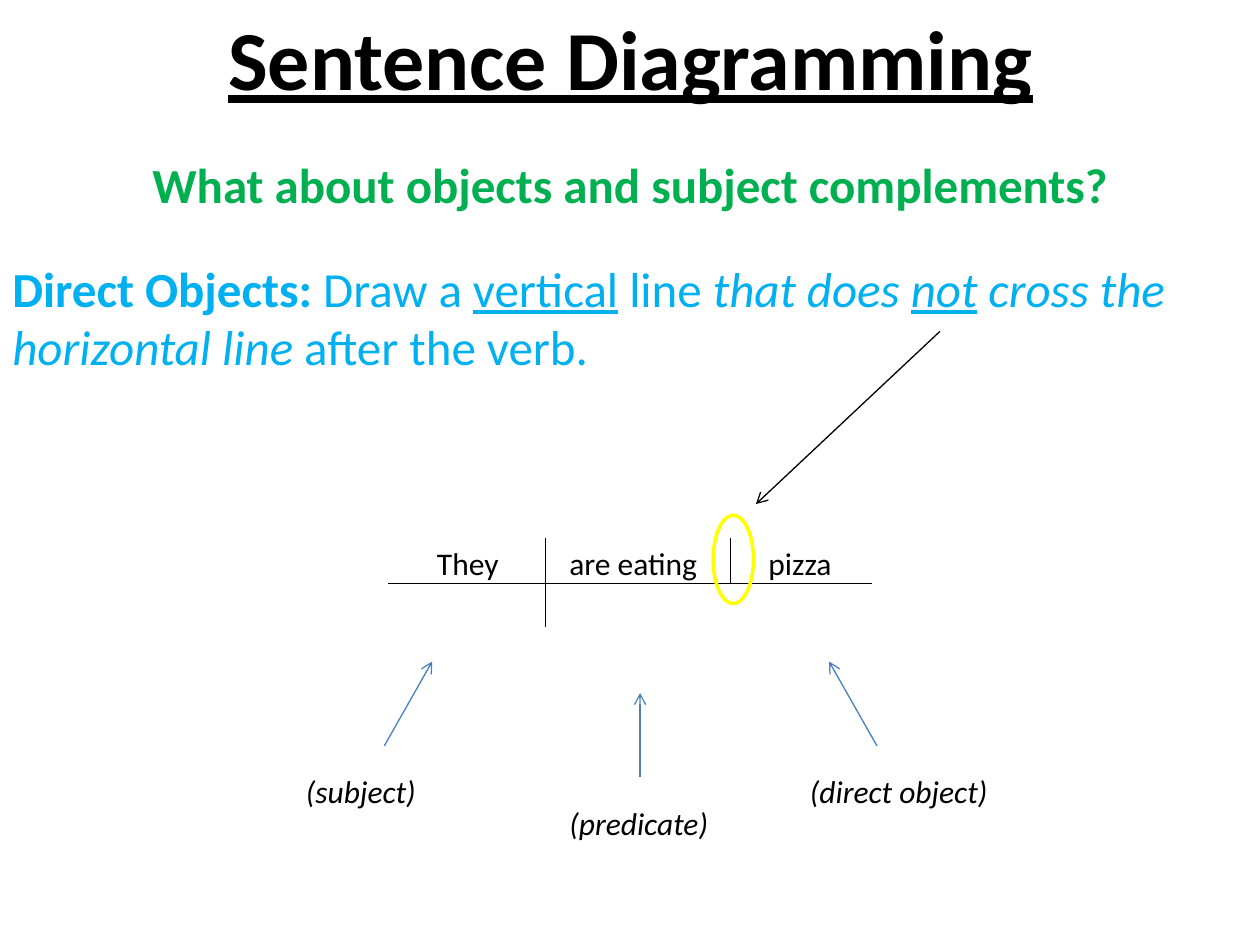
from lxml import etree
from pptx import Presentation
from pptx.dml.color import RGBColor
from pptx.enum.shapes import MSO_CONNECTOR, MSO_SHAPE
from pptx.enum.text import PP_ALIGN
from pptx.oxml.ns import qn
from pptx.util import Inches, Pt

BLACK, GREEN, CYAN, BLUE, YELLOW = "000000", "00B050", "00B0F0", "4B7EBC", "FFFF00"

presentation = Presentation()
presentation.slide_width = Inches(10)
presentation.slide_height = Inches(7.5)
slide = presentation.slides.add_slide(presentation.slide_layouts[6])


def add_text(text, left, top, width, height, size=18, color=BLACK,
             align=PP_ALIGN.LEFT, wrap=False, style=""):
    """Text is a string, or a list of (text, style) runs; style letters: b, i, u."""
    text_box = slide.shapes.add_textbox(
        Inches(left), Inches(top), Inches(width), Inches(height))
    text_box.text_frame.word_wrap = wrap
    paragraph = text_box.text_frame.paragraphs[0]
    paragraph.alignment = align
    runs = [(text, style)] if isinstance(text, str) else text
    for run_text, run_style in runs:
        run = paragraph.add_run()
        run.text = run_text
        font = run.font
        font.name = "Calibri"
        font.size = Pt(size)
        font.color.rgb = RGBColor.from_string(color)
        font.bold = "b" in run_style
        font.italic = "i" in run_style
        font.underline = "u" in run_style


def add_line(x1, y1, x2, y2, color=BLACK, arrow=False):
    connector = slide.shapes.add_connector(
        MSO_CONNECTOR.STRAIGHT, Inches(x1), Inches(y1), Inches(x2), Inches(y2))
    connector.line.color.rgb = RGBColor.from_string(color)
    connector.line.width = Pt(0.75)
    if arrow:
        etree.SubElement(connector.line._get_or_add_ln(), qn("a:tailEnd"), type="arrow")
    etree.SubElement(connector._element.spPr, qn("a:effectLst"))


# Headings and rule
add_text("Sentence Diagramming", 1.68, 0, 6.65, 0.91, size=48,
         align=PP_ALIGN.CENTER, style="bu")
add_text("What about objects and subject complements?", 0, 1.18, 10, 0.57,
         size=28, color=GREEN, align=PP_ALIGN.CENTER, wrap=True, style="b")
add_text([("Direct Objects:", "b"), (" Draw a ", ""), ("vertical", "u"),
          (" line ", ""), ("that does ", "i"), ("not", "iu"),
          (" cross the horizontal line ", "i"), ("after the verb.", "")],
         0, 2, 10, 1.04, size=28, color=CYAN, wrap=True)

# Sentence diagram
word_top, baseline = 4.27, 4.63
add_line(3.08, baseline, 6.92, baseline)
add_line(4.33, word_top, 4.33, 4.98)
add_line(5.8, word_top, 5.8, baseline)
for word, left, width in [("They", 3.37, 0.7), ("are eating", 4.42, 1.23),
                          ("pizza", 6, 0.71)]:
    add_text(word, left, word_top, width, 0.4)

# Labels with arrows up to the words
for label, left, top, width, arrow_start, arrow_end in [
        ("(subject)", 2.33, 6.08, 1.1, 3.05, 3.43),
        ("(predicate)", 4.42, 6.33, 1.32, 5.08, 5.08),
        ("(direct object)", 6.33, 6.08, 1.63, 6.96, 6.58)]:
    add_text(label, left, top, width, 0.4, style="i")
    add_line(arrow_start, top - 0.16, arrow_end, top - 0.83, color=BLUE, arrow=True)

# Highlight of the direct object line
add_line(7.46, 2.63, 6, 4, arrow=True)
highlight = slide.shapes.add_shape(
    MSO_SHAPE.OVAL, Inches(5.66), Inches(4.09), Inches(0.32), Inches(0.7))
highlight.shadow.inherit = False
highlight.fill.background()
highlight.line.color.rgb = RGBColor.from_string(YELLOW)
highlight.line.width = Pt(2)

presentation.save("out.pptx")
